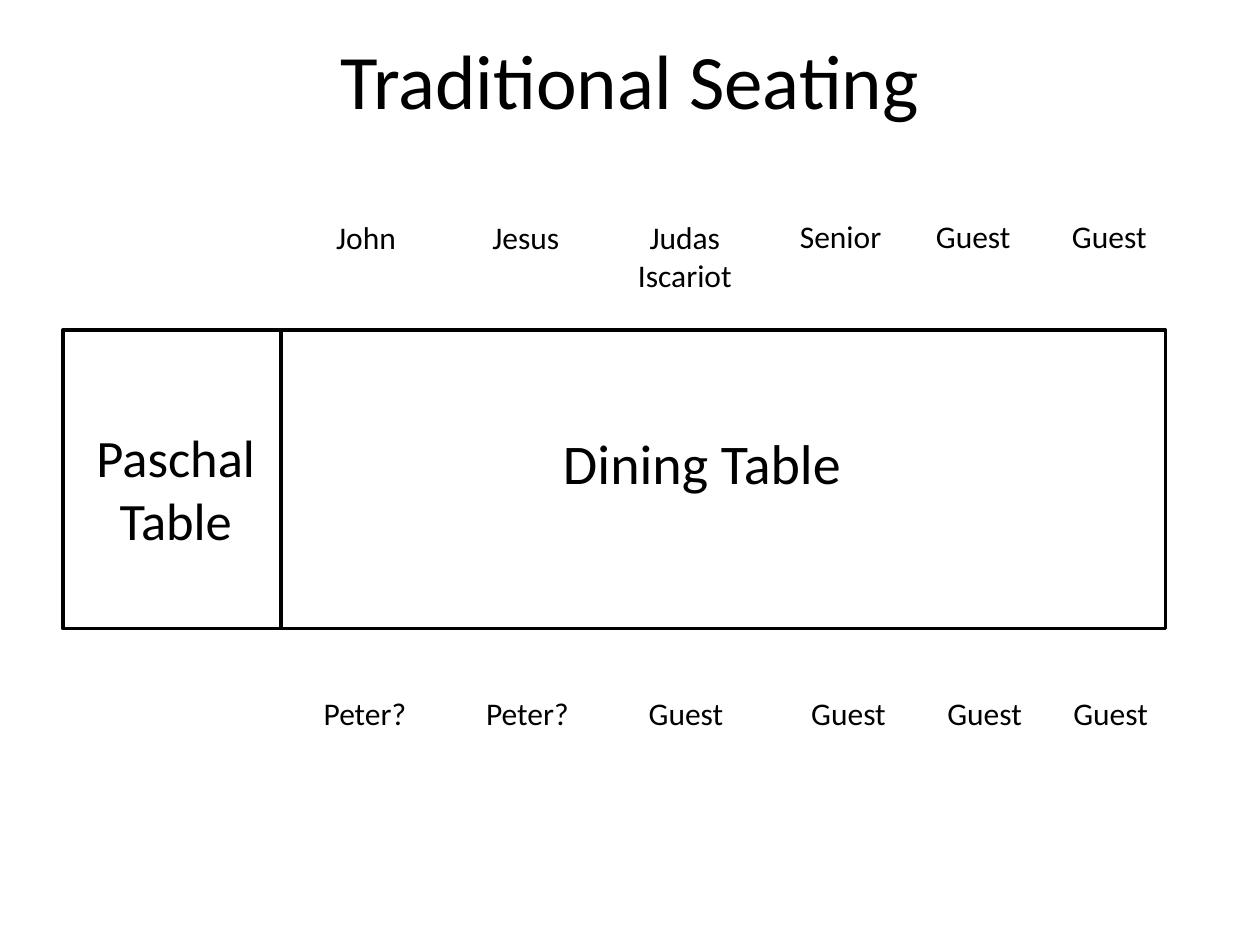
from pptx import Presentation
from pptx.dml.color import RGBColor
from pptx.enum.shapes import MSO_CONNECTOR, MSO_SHAPE
from pptx.enum.text import MSO_ANCHOR, PP_ALIGN as AL
from pptx.oxml.ns import qn
from pptx.util import Inches, Pt
from lxml.etree import SubElement

COLORS = {"ink": "000000", "paper": "FFFFFF"}
INK = RGBColor.from_string(COLORS["ink"])

prs = Presentation()
prs.slide_width, prs.slide_height = Inches(10), Inches(7.5)
s = prs.slides.add_slide(prs.slide_layouts[5])
s.background.fill.solid()
s.background.fill.fore_color.rgb = RGBColor.from_string(COLORS["paper"])


def write(sp, text, size=18, align=AL.LEFT, anchor=MSO_ANCHOR.TOP):
    tf = sp.text_frame
    tf.word_wrap = True
    tf.vertical_anchor = anchor
    p = tf.paragraphs[0]
    p.alignment = align
    r = p.add_run()
    r.text = text
    r.font.name, r.font.size, r.font.color.rgb = "Calibri", Pt(size), INK


def add_label(text, x, y, w, h, **fmt):
    write(s.shapes.add_textbox(*map(Inches, (x, y, w, h))), text, **fmt)


# Title
title = s.shapes.title
title.left, title.top, title.width, title.height = map(Inches, (0.5, 0, 9, 1.25))
write(title, "Traditional Seating", size=44, align=AL.CENTER, anchor=MSO_ANCHOR.MIDDLE)

# Seats on either side of the table: name, left, width, alignment
sides = {
    1.68: [("John", 2.57, 1.43, AL.LEFT), ("Jesus", 3.81, 1, AL.LEFT),
           ("Judas Iscariot", 4.79, 1.29, AL.CENTER)],
    1.67: [("Senior", 6.25, 1.34, AL.LEFT), ("Guest", 7.33, 0.96, AL.LEFT),
           ("Guest", 8.41, 0.84, AL.LEFT)],
    5.46: [("Peter?", 2.47, 1.05, AL.LEFT), ("Peter?", 3.76, 1, AL.LEFT),
           ("Guest", 5.05, 1.05, AL.LEFT), ("Guest", 6.34, 1, AL.LEFT),
           ("Guest", 7.42, 1.05, AL.LEFT), ("Guest", 8.42, 1, AL.LEFT)],
}
for y, seats in sides.items():
    for name, x, w, align in seats:
        add_label(name, x, y, w, 0.71 if align == AL.CENTER else 0.4, align=align)

# Table outline and the divider between its two parts
left, top, width, height, divider_x = map(Inches, (0.5, 2.62, 8.75, 2.37, 2.23))
table = s.shapes.add_shape(MSO_SHAPE.RECTANGLE, left, top, width, height)
table.shadow.inherit = False
table.fill.background()
divider = s.shapes.add_connector(MSO_CONNECTOR.STRAIGHT, divider_x, top, divider_x, top + height)
SubElement(divider._element.spPr, qn("a:effectLst"))
for sp in (table, divider):
    sp.line.color.rgb, sp.line.width = INK, Pt(2)
# The effect list must follow the line in the XML
divider._element.spPr.append(divider._element.spPr.find(qn("a:effectLst")))

# Table names
add_label("Dining Table", 4.37, 3.35, 2.96, 0.91, size=32)
add_label("Paschal Table", 0.5, 3.32, 1.79, 1.11, size=30, align=AL.CENTER)

prs.save("out.pptx")
